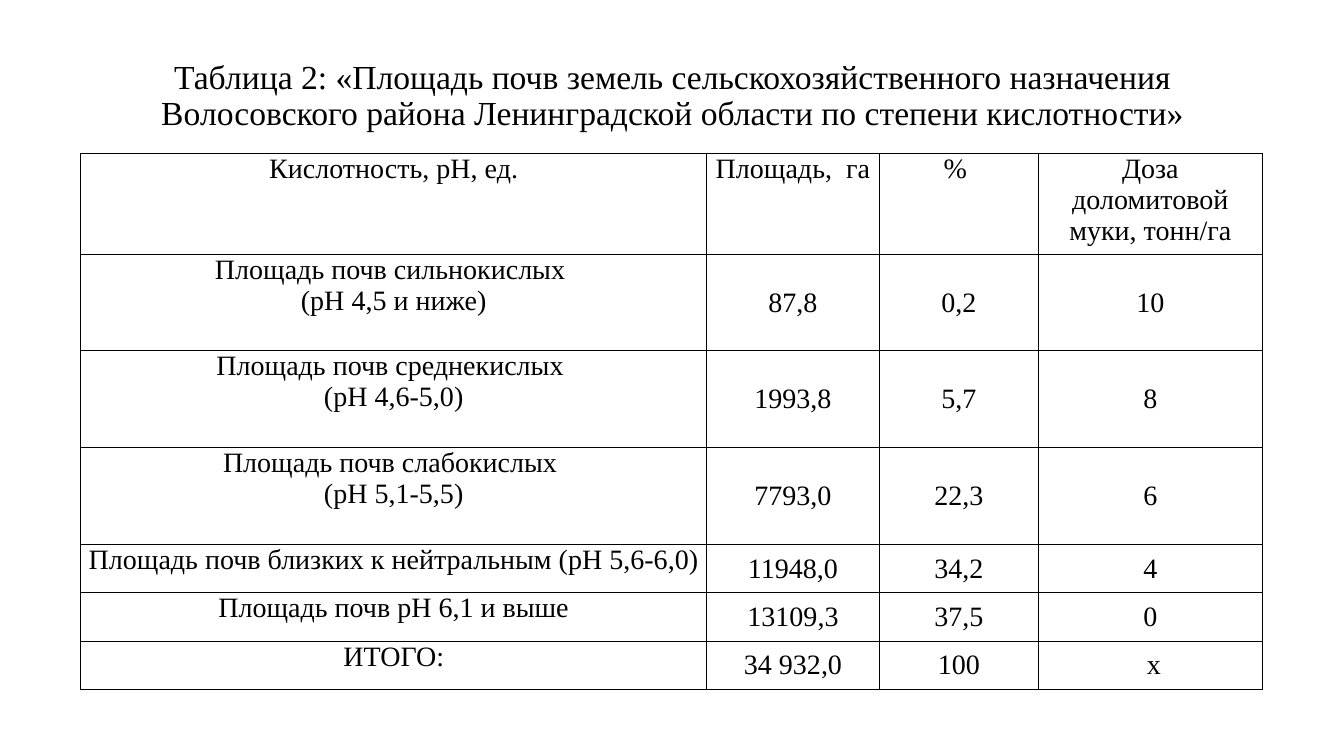
from lxml import etree
from pptx import Presentation
from pptx.dml.color import RGBColor
from pptx.enum.text import MSO_ANCHOR, PP_ALIGN
from pptx.oxml.ns import qn
from pptx.util import Inches, Pt

CENTER = PP_ALIGN.CENTER
TOP, MIDDLE = MSO_ANCHOR.TOP, MSO_ANCHOR.MIDDLE

TITLE = ("Таблица 2: «Площадь почв земель сельскохозяйственного назначения "
         "Волосовского района Ленинградской области по степени кислотности»")
ACIDITY_ROWS = [
    ("Кислотность, pH, ед.", "Площадь,  га", "% ", "Доза доломитовой муки, тонн/га"),
    ("Площадь почв сильнокислых \n(pH 4,5 и ниже)", "87,8", "0,2", "10"),
    ("Площадь почв среднекислых \n(pH 4,6-5,0)", "1993,8", "5,7", "8"),
    ("Площадь почв слабокислых \n(pH 5,1-5,5)", "7793,0", "22,3", "6"),
    ("Площадь почв близких к нейтральным (pH 5,6-6,0)", "11948,0", "34,2", "4"),
    ("Площадь почв pH 6,1 и выше", "13109,3", "37,5", "0"),
    ("ИТОГО:", "34 932,0", "100", " х"),
]
COLUMN_WIDTHS = [6.21, 1.71, 1.58, 2.22]
ROW_HEIGHTS = [0.84] + [0.96] * 3 + [0.48] * 3


def color(hex_value):
    return RGBColor.from_string(hex_value)


def set_attributes(target, values):
    for name, value in values.items():
        setattr(target, name, value)


class SlideBuilder:
    font_name = "Times New Roman"
    ink = "000000"
    border_width = Pt(1)

    def __init__(self, slide):
        self.slide = slide

    def fill_text(self, frame, text, size, line_spacing=None):
        frame.text = text
        for paragraph in frame.paragraphs:
            set_attributes(paragraph, {"alignment": CENTER, "line_spacing": line_spacing})
            for run in paragraph.runs:
                set_attributes(run.font, {"name": self.font_name, "size": Pt(size)})
                run.font.color.rgb = color(self.ink)

    def title(self, text, left, top, width, height):
        box = self.slide.shapes.add_textbox(
            Inches(left), Inches(top), Inches(width), Inches(height))
        set_attributes(box.text_frame, {"word_wrap": True, "vertical_anchor": MIDDLE})
        self.fill_text(box.text_frame, text, 24, 0.9)

    def borders(self, cell):
        properties = cell._tc.get_or_add_tcPr()
        for side in ("lnL", "lnR", "lnT", "lnB"):
            line = etree.SubElement(properties, qn("a:" + side), w=str(self.border_width))
            fill = etree.SubElement(line, qn("a:solidFill"))
            etree.SubElement(fill, qn("a:srgbClr"), val=self.ink)

    def table(self, rows, left, top, widths, heights):
        table = self.slide.shapes.add_table(
            len(rows), len(widths), Inches(left), Inches(top),
            Inches(sum(widths)), Inches(sum(heights))).table
        set_attributes(table, {"first_row": False, "horz_banding": False})
        for column, width in zip(table.columns, widths):
            column.width = Inches(width)
        for row, height in zip(table.rows, heights):
            row.height = Inches(height)
        for row_index, texts in enumerate(rows):
            for column_index, text in enumerate(texts):
                cell = table.cell(row_index, column_index)
                # Only the figures are centred vertically
                is_figure = row_index > 0 and column_index > 0
                set_attributes(cell, {
                    "margin_left": Inches(0.07), "margin_right": Inches(0.07),
                    "margin_top": 0, "margin_bottom": 0,
                    "vertical_anchor": MIDDLE if is_figure else TOP})
                self.borders(cell)
                cell.fill.background()
                self.fill_text(cell.text_frame, text, 20)


def main():
    presentation = Presentation()
    set_attributes(presentation, {"slide_width": Inches(13.33), "slide_height": Inches(7.5)})
    builder = SlideBuilder(presentation.slides.add_slide(presentation.slide_layouts[6]))

    # Heading
    builder.title(TITLE, 0.92, 0.4, 11.5, 1.12)

    # Soil acidity table
    builder.table(ACIDITY_ROWS, 0.8, 1.52, COLUMN_WIDTHS, ROW_HEIGHTS)

    presentation.save("out.pptx")


if __name__ == "__main__":
    main()
